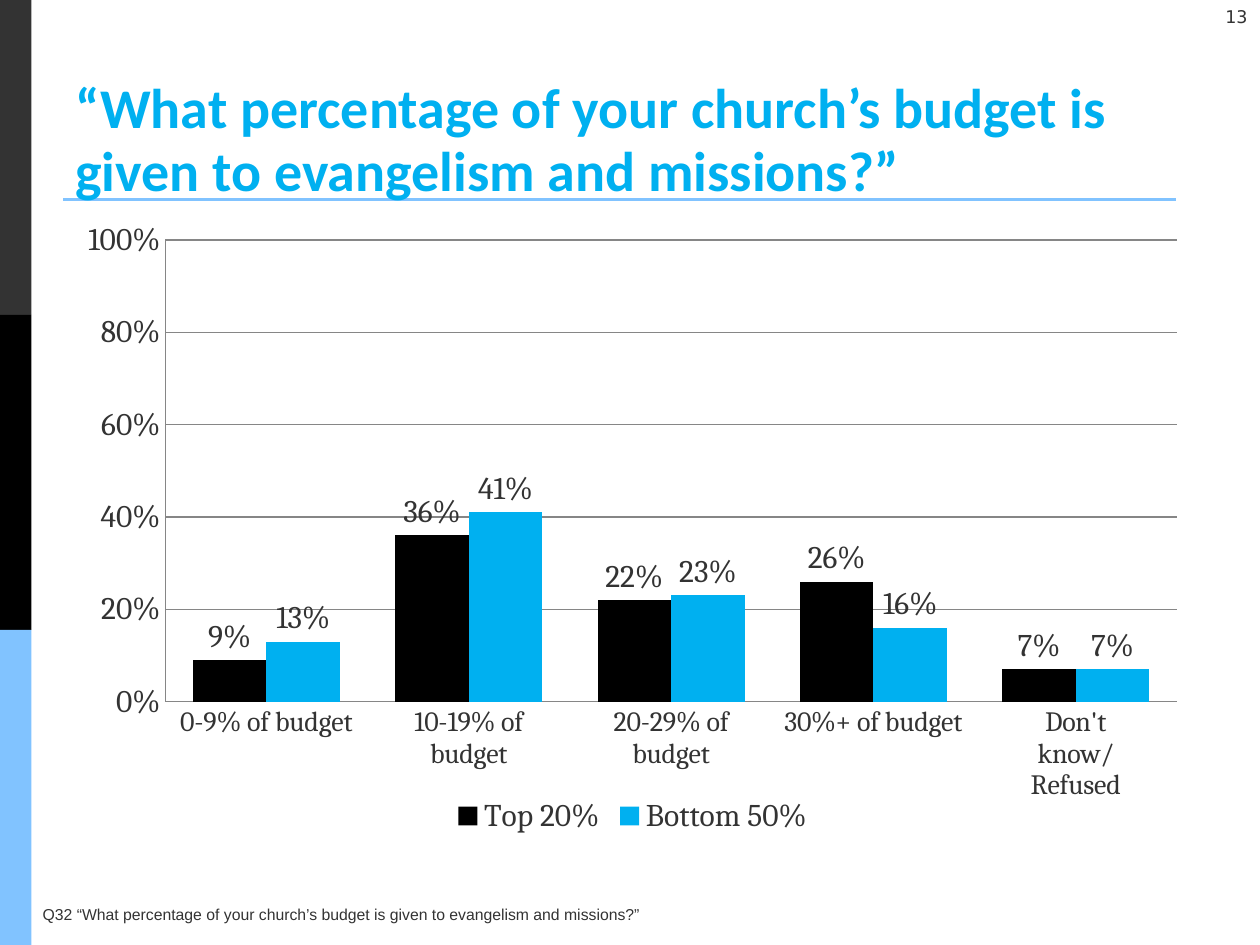
from lxml import etree
from pptx import Presentation
from pptx.chart.data import CategoryChartData
from pptx.dml.color import RGBColor
from pptx.enum.chart import XL_CHART_TYPE, XL_LABEL_POSITION, XL_LEGEND_POSITION, XL_TICK_MARK
from pptx.enum.shapes import MSO_CONNECTOR, MSO_SHAPE
from pptx.enum.text import MSO_ANCHOR, PP_ALIGN
from pptx.oxml.ns import qn
from pptx.util import Pt

COLUMNS = XL_CHART_TYPE.COLUMN_CLUSTERED
OUTSIDE = XL_LABEL_POSITION.OUTSIDE_END
LEGEND_BOTTOM = XL_LEGEND_POSITION.BOTTOM
NO_TICK = XL_TICK_MARK.NONE
STRAIGHT = MSO_CONNECTOR.STRAIGHT
RECTANGLE = MSO_SHAPE.RECTANGLE
TOP, BOTTOM = MSO_ANCHOR.TOP, MSO_ANCHOR.BOTTOM
LEFT, RIGHT = PP_ALIGN.LEFT, PP_ALIGN.RIGHT

CHARCOAL = RGBColor(0x33, 0x33, 0x33)
BLACK = RGBColor(0x00, 0x00, 0x00)
SKY = RGBColor(0x81, 0xC3, 0xFF)
CYAN = RGBColor(0x00, 0xB0, 0xF0)
GRAY = RGBColor(0x86, 0x86, 0x86)


def apply(target, values):
    for name, value in values.items():
        setattr(target, name, value)


class SurveySlide:
    """Draws survey elements on one slide in a shared style."""

    def __init__(self, slide):
        self.slide = slide
        self.shapes = slide.shapes
        self.title_font = {"name": "Calibri", "size": Pt(32), "bold": True}
        self.note_font = {"name": "Arial", "size": Pt(9)}
        self.number_font = {"name": "DejaVu Sans", "size": Pt(10)}
        self.chart_font = {"name": "Cambria", "size": Pt(18)}

    def band(self, left, top, width, height, color):
        band = self.shapes.add_shape(RECTANGLE, Pt(left), Pt(top), Pt(width), Pt(height))
        band.shadow.inherit = False
        band.fill.solid()
        band.fill.fore_color.rgb = color
        band.line.fill.background()

    def rule(self, left, right, y, color, width):
        rule = self.shapes.add_connector(STRAIGHT, Pt(left), Pt(y), Pt(right), Pt(y))
        rule.line.color.rgb = color
        rule.line.width = Pt(width)
        properties = rule._element.find(qn("p:spPr"))
        etree.SubElement(properties, qn("a:effectLst"))

    def text(self, box, words, font, color, anchor=TOP, align=LEFT, spacing=None):
        frame = self.shapes.add_textbox(*map(Pt, box)).text_frame
        apply(frame, {"word_wrap": True, "vertical_anchor": anchor})
        paragraph = frame.paragraphs[0]
        apply(paragraph, {"alignment": align, "line_spacing": spacing})
        run = paragraph.add_run()
        run.text = words
        apply(run.font, font)
        run.font.color.rgb = color

    def column_chart(self, box, categories, series):
        data = CategoryChartData(number_format="0%")
        data.categories = categories
        for name, values, _ in series:
            data.add_series(name, values)
        chart = self.shapes.add_chart(COLUMNS, *map(Pt, box), data).chart
        apply(chart, {"has_title": False, "has_legend": True})
        apply(chart.font, self.chart_font)
        chart.font.color.rgb = CHARCOAL
        apply(chart.legend, {"position": LEGEND_BOTTOM, "include_in_layout": False})

        shares, answers = chart.value_axis, chart.category_axis
        apply(shares, {"minimum_scale": 0, "maximum_scale": 1, "major_unit": 0.2,
                       "has_major_gridlines": True})
        apply(shares.tick_labels, {"number_format": "0%", "number_format_is_linked": False})
        answers.tick_labels.font.size = Pt(16)
        for axis in (shares, answers):
            apply(axis, {"major_tick_mark": NO_TICK, "minor_tick_mark": NO_TICK})
            axis.format.line.color.rgb = GRAY
        shares.major_gridlines.format.line.color.rgb = GRAY

        plot = chart.plots[0]
        apply(plot, {"gap_width": 75, "overlap": 0, "vary_by_categories": False})
        for column, (_, _, color) in zip(plot.series, series):
            column.format.fill.solid()
            column.format.fill.fore_color.rgb = color
            apply(column.data_labels, {"show_value": True, "number_format": "0%",
                                       "number_format_is_linked": False,
                                       "position": OUTSIDE})


def main():
    deck = Presentation()
    apply(deck, {"slide_width": Pt(720), "slide_height": Pt(540)})
    page = SurveySlide(deck.slides.add_slide(deck.slide_layouts[6]))

    for position, color in enumerate((CHARCOAL, BLACK, SKY)):
        page.band(0, 180 * position, 18, 180, color)
    page.rule(36, 672, 114, SKY, 1.5)

    question = "“What percentage of your church’s budget is given to evangelism and missions?”"
    page.text((684, 0, 36, 24), "13", page.number_font, CHARCOAL, align=RIGHT)
    page.text((17.3, 513.4, 538.6, 18), f"Q32 {question}", page.note_font, CHARCOAL)

    answers = ["0-9% of budget", "10-19% of budget", "20-29% of budget",
               "30%+ of budget", "Don't know/Refused"]
    groups = [("Top 20%", (0.09, 0.36, 0.22, 0.26, 0.07), BLACK),
              ("Bottom 50%", (0.13, 0.41, 0.23, 0.16, 0.07), CYAN)]
    page.column_chart((37.5, 119.5, 648, 361), answers, groups)
    page.text((36, 29.5, 635, 90), question, page.title_font, CYAN,
              anchor=BOTTOM, spacing=Pt(36))
    deck.save("out.pptx")


if __name__ == "__main__":
    main()
